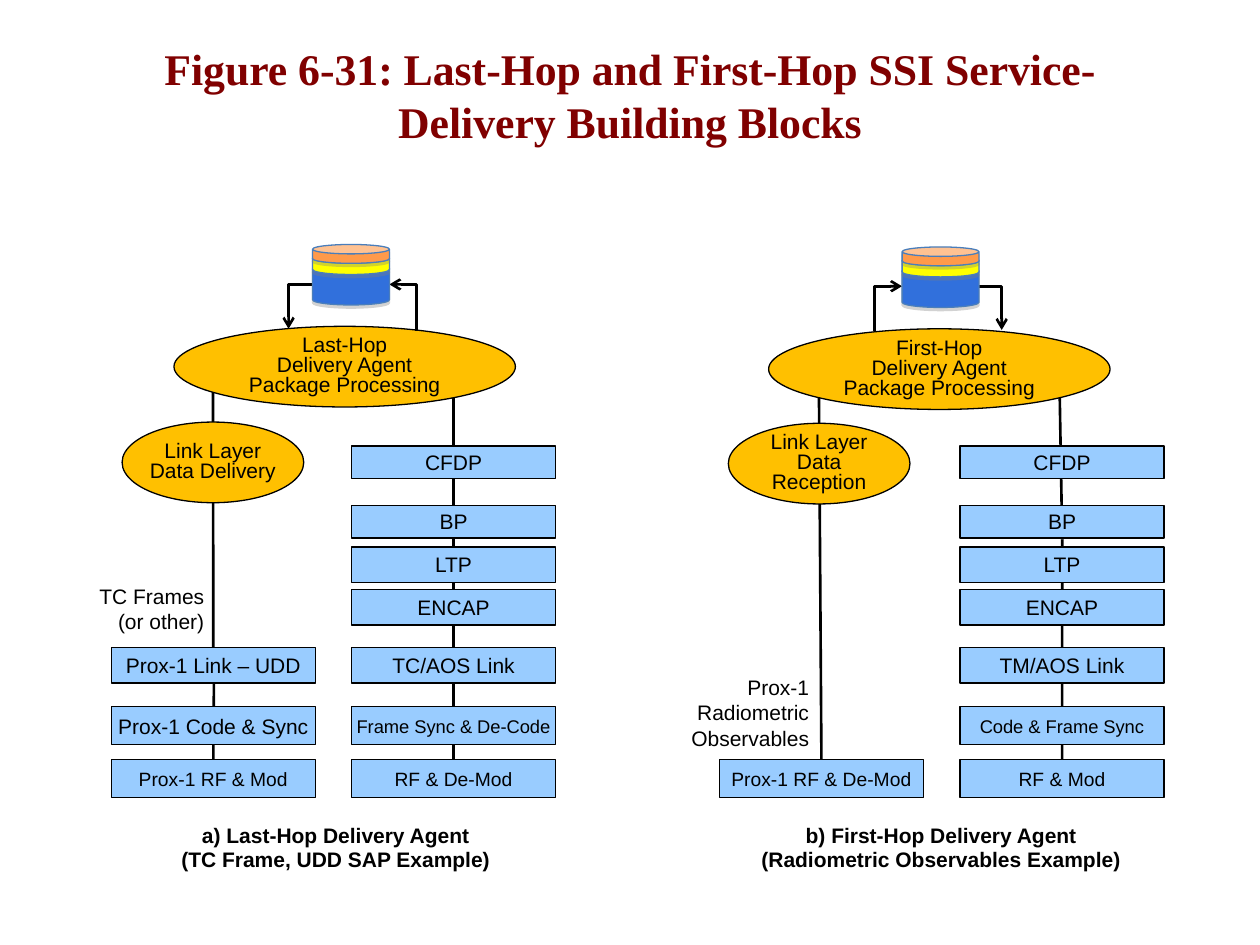
from lxml import etree
from pptx import Presentation
from pptx.dml.color import RGBColor
from pptx.enum.shapes import MSO_CONNECTOR, MSO_SHAPE
from pptx.enum.text import MSO_ANCHOR, PP_ALIGN
from pptx.oxml.ns import qn
from pptx.util import Pt

STRAIGHT, ELBOW = MSO_CONNECTOR.STRAIGHT, MSO_CONNECTOR.ELBOW
RECTANGLE, OVAL, CAN = MSO_SHAPE.RECTANGLE, MSO_SHAPE.OVAL, MSO_SHAPE.CAN
CENTER, RIGHT = PP_ALIGN.CENTER, PP_ALIGN.RIGHT
MIDDLE = MSO_ANCHOR.MIDDLE
TOP_SIDE = 0

BLACK, MAROON, BLUE, AMBER = "000000", "800000", "99CCFF", "FFC000"
BOX_WIDTH = 116.6
CAN_WIDTH = 43.9
# Top and height of each protocol layer, shared by all stacks
ROWS = [(254.9, 18.7), (288.7, 18.7), (312.5, 20.2), (337, 20.2),
        (370.1, 20.2), (403.9, 21.6), (434.2, 21.6)]
# Store layers from back to front: top offset, height, bend, fill
CAN_LAYERS = [(10.8, 23.8, 0.25, "3170DC"), (5, 12.2, 0.47, "FFFF00"),
              (0, 10.8, 0.5, "FF9A4A")]


def color(hex_string):
    return RGBColor.from_string(hex_string)


def write(shape, lines, size, align=CENTER, bold=False, font="Arial",
          text_color=BLACK, spacing=None, insets=None, wrap=True):
    frame = shape.text_frame
    frame.word_wrap = wrap
    frame.vertical_anchor = MIDDLE
    if insets is not None:
        frame.margin_left = frame.margin_right = Pt(insets[0])
        frame.margin_top = frame.margin_bottom = Pt(insets[1])
    for index, line in enumerate(lines):
        paragraph = frame.add_paragraph() if index else frame.paragraphs[0]
        paragraph.alignment = align
        if spacing is not None:
            paragraph.line_spacing = spacing
        run = paragraph.add_run()
        run.text = line
        run.font.name = font
        run.font.size = Pt(size)
        run.font.bold = bold
        run.font.color.rgb = color(text_color)


def add_filled(shapes, kind, left, top, width, height, fill, line=BLACK):
    shape = shapes.add_shape(kind, Pt(left), Pt(top), Pt(width), Pt(height))
    shape.shadow.inherit = False
    shape.fill.solid()
    shape.fill.fore_color.rgb = color(fill)
    shape.line.color.rgb = color(line)
    shape.line.width = Pt(0.75)
    return shape


def add_label(slide, left, top, width, height, lines, size, **style):
    box = slide.shapes.add_textbox(Pt(left), Pt(top), Pt(width), Pt(height))
    write(box, lines, size, **style)


def add_oval(slide, left, top, width, lines):
    oval = add_filled(slide.shapes, OVAL, left, top, width, 46.1, AMBER)
    write(oval, lines, 12, spacing=0.8, insets=(0, 0))


def add_line(slide, start, end, kind=STRAIGHT):
    x1, y1, x2, y2 = (Pt(value) for value in (*start, *end))
    connector = slide.shapes.add_connector(kind, x1, y1, x2, y2)
    connector.line.color.rgb = color(BLACK)
    connector.line.width = Pt(1.5)
    etree.SubElement(connector._element.spPr, qn("a:effectLst"))
    return connector


def add_elbow(slide, start, end, arrow_end):
    """One-bend line; arrow_end is headEnd (start) or tailEnd (end)."""
    connector = add_line(slide, start, end, ELBOW)
    properties = connector._element.spPr
    properties.find(qn("a:prstGeom")).set("prst", "bentConnector2")
    line = properties.find(qn("a:ln"))
    etree.SubElement(line, qn("a:" + arrow_end), type="arrow")


def add_stack(slide, left, labels):
    """Boxes on the lowest rows; returns them from top to bottom."""
    boxes = []
    for (top, height), (text, size) in zip(ROWS[-len(labels):], labels):
        box = add_filled(slide.shapes, RECTANGLE, left, top, BOX_WIDTH, height, BLUE)
        insets = (0, 0) if size == 10.5 else (2.9, 2.2)
        write(box, [text], size, insets=insets)
        boxes.append(box)
    return boxes


def add_store(slide, left, top):
    group = slide.shapes.add_group_shape()
    for offset, height, bend, fill in CAN_LAYERS:
        can = add_filled(group.shapes, CAN, left, top + offset, CAN_WIDTH,
                         height, fill, "4A7EBB")
        can.adjustments[0] = bend
        effects = can._element.spPr.find(qn("a:effectLst"))
        shadow = etree.SubElement(effects, qn("a:outerShdw"), dist=str(Pt(1.8)),
                                  dir="5400000", rotWithShape="0")
        tint = etree.SubElement(shadow, qn("a:srgbClr"), val="808080")
        etree.SubElement(tint, qn("a:alpha"), val="35000")


def main_labels(link, sync, radio):
    return [("CFDP", 12), ("BP", 12), ("LTP", 12), ("ENCAP", 12),
            (link, 12), (sync, 10.5), (radio, 11)]


def add_last_hop(slide):
    # Lines lie behind the boxes, then are joined to them
    to_cfdp = add_line(slide, (259.2, 221), (259.2, 254.9))
    add_line(slide, (259.2, 308.2), (259.2, 265.7))
    to_radio = add_line(slide, (259.2, 308.2), (259.2, 434.2))
    to_link = add_line(slide, (121.7, 202.3), (122.4, 370.1))
    to_side_radio = add_line(slide, (122.4, 370.1), (121.7, 434.2))
    boxes = add_stack(slide, 200.9, main_labels(
        "TC/AOS Link", "Frame Sync & De-Code", "RF & De-Mod"))
    side = add_stack(slide, 63.6, [("Prox-1 Link – UDD", 12),
                                   ("Prox-1 Code & Sync", 12),
                                   ("Prox-1 RF & Mod", 11)])
    for line, box in ((to_cfdp, boxes[0]), (to_radio, boxes[-1]),
                      (to_link, side[0]), (to_side_radio, side[-1])):
        line.end_connect(box, TOP_SIDE)

    # Agents and store
    add_oval(slide, 99.4, 186.5, 195.1,
             ["Last-Hop", "Delivery Agent", "Package Processing"])
    add_oval(slide, 69.8, 241.2, 103.8, ["Link Layer", "Data Delivery"])
    add_elbow(slide, (222.5, 162.5), (238, 189.4), "headEnd")
    add_elbow(slide, (178.6, 162.5), (164.9, 187.9), "tailEnd")
    add_store(slide, 178.6, 139.7)

    # Labels
    add_label(slide, 49, 329.8, 74.9, 36, ["TC Frames", "(or other)"], 12,
              align=RIGHT, wrap=False)
    add_label(slide, 95.8, 466.6, 192.2, 35.3,
              ["a) Last-Hop Delivery Agent", "(TC Frame, UDD SAP Example)"],
              12, bold=True, spacing=Pt(14), wrap=False)


def add_first_hop(slide):
    # Lines lie behind the boxes, then are joined to them
    to_radio = add_line(slide, (607, 308.2), (607, 434.2))
    add_line(slide, (607, 308.2), (605.5, 221.8))
    to_side_radio = add_line(slide, (468, 227.5), (469.4, 434.2))
    boxes = add_stack(slide, 548.6, main_labels(
        "TM/AOS Link", "Code & Frame Sync", "RF & Mod"))
    side = add_stack(slide, 411.1, [("Prox-1 RF & De-Mod", 11)])
    to_radio.end_connect(boxes[-1], TOP_SIDE)
    to_side_radio.end_connect(side[0], TOP_SIDE)

    # Agents and store
    add_oval(slide, 439.2, 187.9, 195.1,
             ["First-Hop", "Delivery Agent", "Package Processing"])
    add_oval(slide, 416.2, 241.9, 103.8, ["Link Layer", "Data Reception"])
    add_elbow(slide, (559.4, 163.6), (572.4, 188.6), "tailEnd")
    add_elbow(slide, (515.5, 163.6), (499.7, 189.4), "headEnd")
    add_store(slide, 515.5, 141.1)

    # Labels
    add_label(slide, 387.4, 381.6, 82.1, 51.1,
              ["Prox-1", "Radiometric", "Observables"], 12,
              align=RIGHT, wrap=False)
    add_label(slide, 427.7, 466.6, 220.3, 35.3,
              ["b) First-Hop Delivery Agent", "(Radiometric Observables Example)"],
              12, bold=True, spacing=Pt(14), wrap=False)


def main():
    presentation = Presentation()
    presentation.slide_width, presentation.slide_height = Pt(720), Pt(540)
    slide = presentation.slides.add_slide(presentation.slide_layouts[6])
    add_label(slide, 54, 24, 612, 60,
              ["Figure 6-31: Last-Hop and First-Hop SSI Service-Delivery Building Blocks"],
              25, bold=True, font="Times New Roman", text_color=MAROON,
              spacing=Pt(30))
    add_last_hop(slide)
    add_first_hop(slide)
    presentation.save("out.pptx")


if __name__ == "__main__":
    main()
